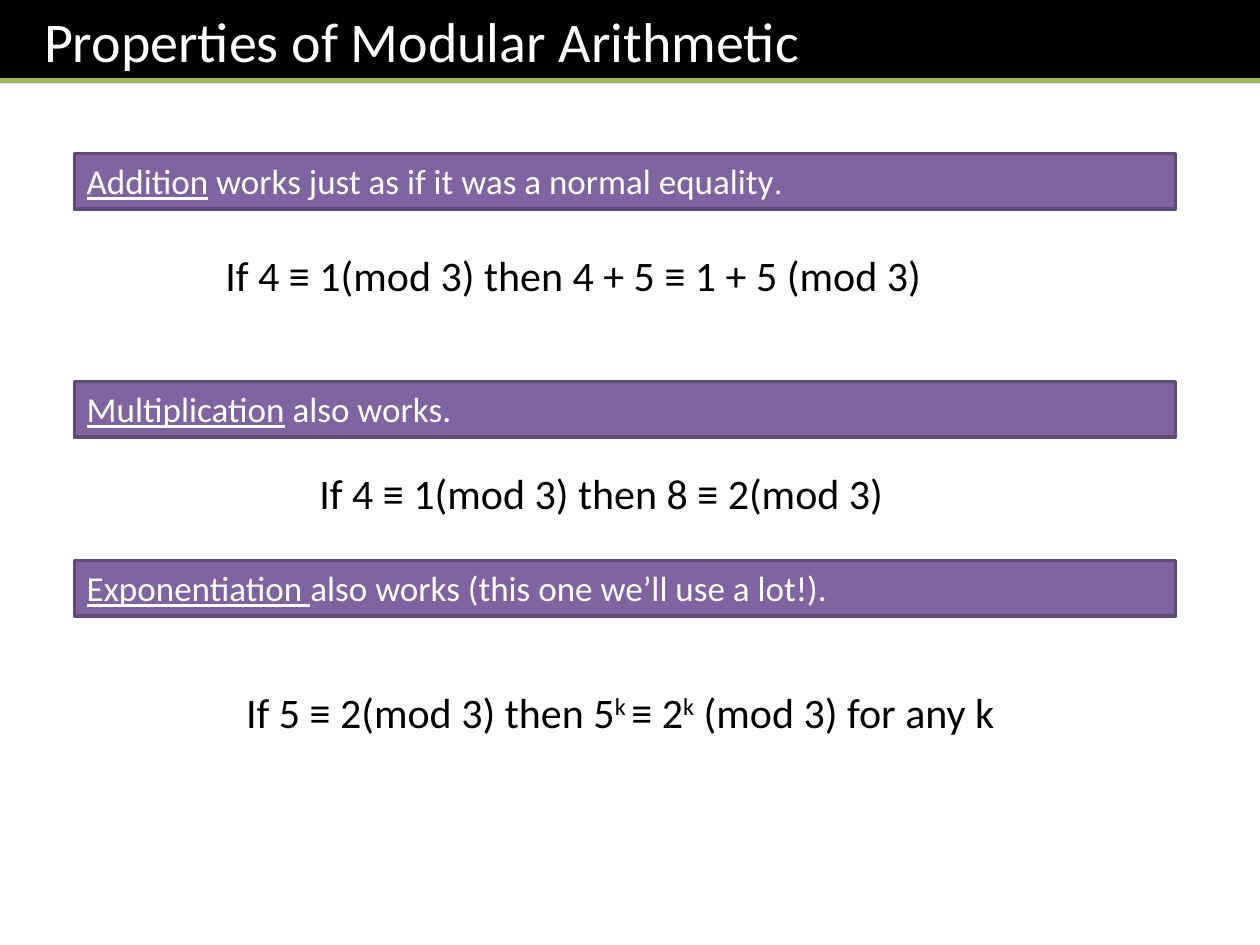
from lxml.etree import SubElement
from pptx import Presentation
from pptx.dml.color import RGBColor
from pptx.enum.shapes import MSO_CONNECTOR, MSO_SHAPE
from pptx.enum.text import MSO_ANCHOR, MSO_AUTO_SIZE, PP_ALIGN
from pptx.oxml.ns import qn
from pptx.util import Inches, Pt

BLACK = RGBColor(0x00, 0x00, 0x00)
WHITE = RGBColor(0xFF, 0xFF, 0xFF)
PURPLE = RGBColor(0x80, 0x64, 0xA2)
DARK_PURPLE = RGBColor(0x5F, 0x4A, 0x78)
GREEN = RGBColor(0x9B, 0xBB, 0x59)

WIDTH, HEIGHT = Inches(10), Inches(7.5)
BANNER_HEIGHT = 0.66
RULE_TOP = 0.64
RULE_HEIGHT, RULE_LEFT, RULE_WIDTH = 0.44, 0.59, 8.74
EXAMPLE_WIDTH, EXAMPLE_HEIGHT = 6.54, 0.5

TITLE = {"name": "Calibri", "size": Pt(32)}
STATEMENT = {"name": "Calibri", "size": Pt(20)}
EXAMPLE = {"name": "Calibri", "size": Pt(24)}
UNDERLINED = {"underline": True}
SMALLER = {"size": Pt(18)}
SUPERSCRIPT = {"baseline": "30000"}

PROPERTIES = [
    (1.22,
     [("Addition", UNDERLINED),
      (" works just as if it was a normal equality", {}), (".", SMALLER)],
     1.69, 1.93, PP_ALIGN.LEFT,
     [("If 4 ≡ 1(mod 3) then 4 + 5 ≡ 1 + 5 (mod 3)", {})]),
    (3.03,
     [("Multiplication", UNDERLINED), (" also works.", {})],
     1.54, 3.66, PP_ALIGN.CENTER,
     [("If 4 ≡ 1(mod 3) then 8 ≡ 2(mod 3) ", {})]),
    (4.45,
     [("Exponentiation ", UNDERLINED),
      ("also works (this one we’ll use a lot!).", {})],
     1.69, 5.4, PP_ALIGN.CENTER,
     [("If 5 ≡ 2(mod 3) then 5", {}), ("k ", SUPERSCRIPT), ("≡ 2", {}),
      ("k", SUPERSCRIPT), (" (mod 3) for any k ", {})]),
]


def set_attributes(target, values):
    for attribute, value in values.items():
        setattr(target, attribute, value)


def write_text(holder, pieces, style, color, align=PP_ALIGN.LEFT, margin_left=0.1):
    frame = holder.text_frame
    set_attributes(frame, {
        "word_wrap": True,
        "auto_size": MSO_AUTO_SIZE.NONE,
        "vertical_anchor": MSO_ANCHOR.TOP,
        "margin_left": Inches(margin_left),
        "margin_right": Inches(0.1),
        "margin_top": Inches(0.05),
        "margin_bottom": Inches(0.05),
    })
    paragraph = frame.paragraphs[0]
    paragraph.alignment = align
    for words, changes in pieces:
        values = {**style, **changes}
        baseline = values.pop("baseline", None)
        run = paragraph.add_run()
        run.text = words
        set_attributes(run.font, values)
        run.font.color.rgb = color
        if baseline:
            run._r.get_or_add_rPr().set("baseline", baseline)


def add_bar(slide, left, top, width, height, fill, outline=None):
    bar = slide.shapes.add_shape(MSO_SHAPE.RECTANGLE, Inches(left), Inches(top),
                                 Inches(width), Inches(height))
    bar.shadow.inherit = False
    bar.fill.solid()
    bar.fill.fore_color.rgb = fill
    if outline is None:
        bar.line.fill.background()
    else:
        bar.line.color.rgb = outline
        bar.line.width = Pt(2)
    return bar


def add_statement(slide, top, pieces):
    bar = add_bar(slide, RULE_LEFT, top, RULE_WIDTH, RULE_HEIGHT, PURPLE, DARK_PURPLE)
    write_text(bar, pieces, STATEMENT, WHITE)


def add_example(slide, left, top, align, pieces):
    example = slide.shapes.add_textbox(Inches(left), Inches(top),
                                       Inches(EXAMPLE_WIDTH), Inches(EXAMPLE_HEIGHT))
    write_text(example, pieces, EXAMPLE, BLACK, align)


def add_banner(slide, title):
    banner = add_bar(slide, 0, 0, WIDTH.inches, BANNER_HEIGHT, BLACK)
    write_text(banner, [(title, {})], TITLE, WHITE, margin_left=0.35)
    accent = slide.shapes.add_connector(MSO_CONNECTOR.STRAIGHT, 0, Inches(RULE_TOP),
                                        WIDTH, Inches(RULE_TOP))
    accent.line.color.rgb = GREEN
    accent.line.width = Pt(3)
    SubElement(accent._element.spPr, qn("a:effectLst"))


def main():
    presentation = Presentation()
    set_attributes(presentation, {"slide_width": WIDTH, "slide_height": HEIGHT})
    slide = presentation.slides.add_slide(presentation.slide_layouts[6])
    for statement_top, statement, left, top, align, example in PROPERTIES:
        add_statement(slide, statement_top, statement)
        add_example(slide, left, top, align, example)
    add_banner(slide, "Properties of Modular Arithmetic")
    presentation.save("out.pptx")


if __name__ == "__main__":
    main()
